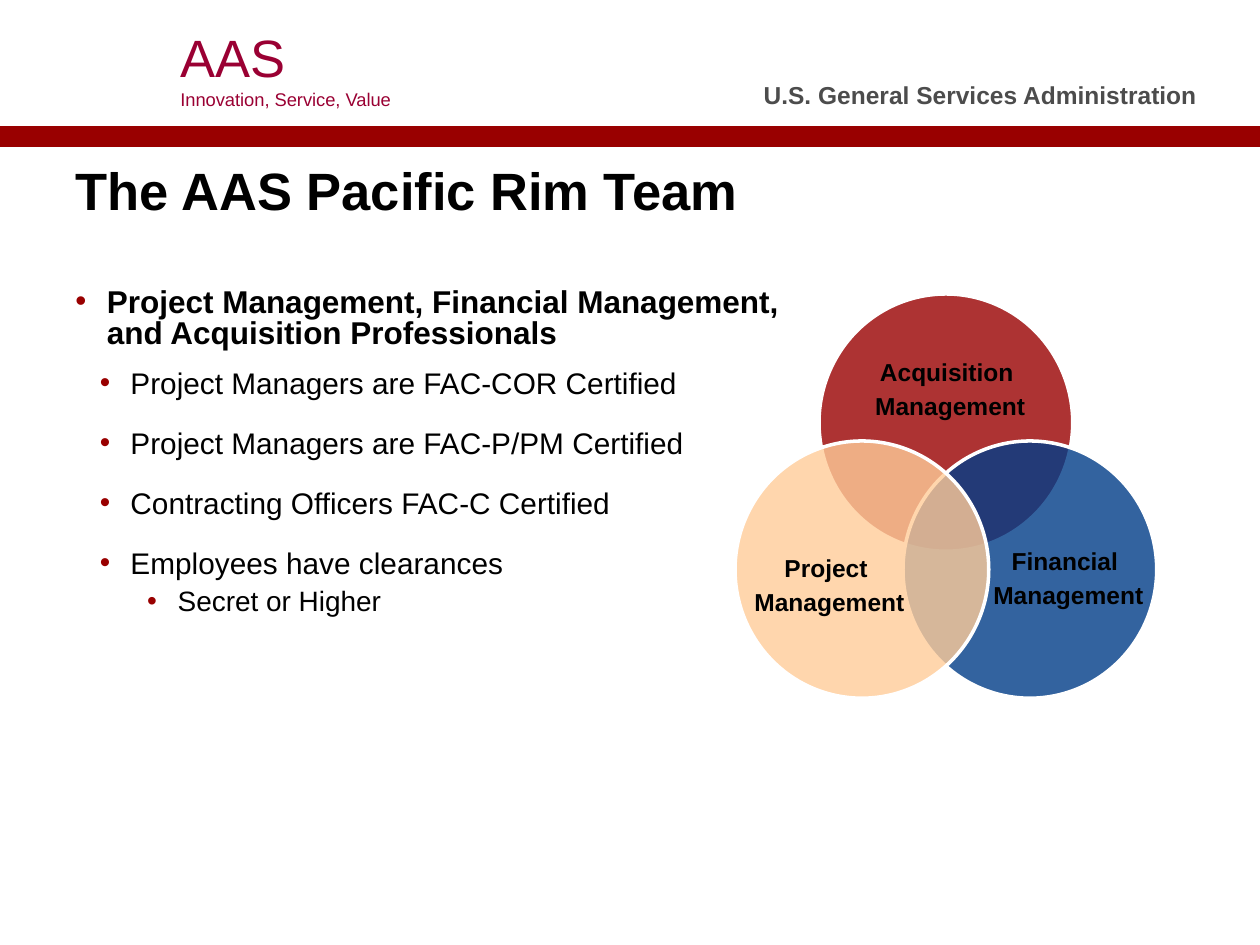
from lxml import etree
from pptx import Presentation
from pptx.dml.color import RGBColor
from pptx.enum import shapes, text
from pptx.oxml import ns
from pptx.util import Pt

COLORS = {"red": "990000", "crimson": "9A0033", "gray": "4C4C4C", "black": "000000",
          "white": "FFFFFF", "blue": "013C88", "peach": "FFCC99"}
FONT = "Arial"
INSETS = (7.2, 3.6, 7.2, 3.6)
SIDES = ("left", "top", "right", "bottom")

TEAM = [
    ("Project Management, Financial Management, and Acquisition Professionals", 0, 18, 18, 0),
    ("Project Managers are FAC-COR Certified", 1, 17, 31.5, 12),
    ("Project Managers are FAC-P/PM Certified", 1, 17, 31.5, 18),
    ("Contracting Officers FAC-C Certified", 1, 17, 31.5, 18),
    ("Employees have clearances", 1, 17, 31.5, 18),
    ("Secret or Higher", 1, 16, 58.5, 6),
]

VENN = [
    ("Acquisition ", "red", (48, 0), (66, 30, 114, 48), "MIDDLE"),
    ("Financial ", "blue", (96, 84), (136.5, 144, 108, 42), "TOP"),
    ("Project ", "peach", (0, 84), (0, 144, 108, 44), "MIDDLE"),
]


def color(name):
    return RGBColor.from_string(COLORS[name])


def place(part, box):
    for side, length in zip(("left", "top", "width", "height"), box):
        setattr(part, side, Pt(length))


def format_frame(frame, insets=INSETS, anchor="TOP"):
    settings = {f"margin_{side}": Pt(inset) for side, inset in zip(SIDES, insets)}
    settings.update(word_wrap=True, auto_size=text.MSO_AUTO_SIZE.NONE,
                    vertical_anchor=text.MSO_ANCHOR[anchor])
    for key, value in settings.items():
        setattr(frame, key, value)


def write(paragraph, words, size, ink="black", bold=False, align="LEFT", before=0):
    paragraph.alignment = text.PP_ALIGN[align]
    paragraph.space_before = Pt(before)
    run = paragraph.add_run()
    run.text = words
    for key, value in {"name": FONT, "size": Pt(size), "bold": bold}.items():
        setattr(run.font, key, value)
    run.font.color.rgb = color(ink)


def next_paragraph(frame, index):
    return frame.add_paragraph() if index else frame.paragraphs[0]


def add_text(parent, box, insets=INSETS, anchor="TOP"):
    frame = parent.add_textbox(*map(Pt, box)).text_frame
    format_frame(frame, insets, anchor)
    return frame


def add_bullet(paragraph, indent, hang):
    properties = paragraph._p.get_or_add_pPr()
    properties.set("marL", str(Pt(indent)))
    properties.set("indent", str(Pt(-hang)))
    bullet_color = etree.SubElement(properties, ns.qn("a:buClr"))
    etree.SubElement(bullet_color, ns.qn("a:srgbClr"), val=COLORS["red"])
    etree.SubElement(properties, ns.qn("a:buFont"), typeface=FONT)
    etree.SubElement(properties, ns.qn("a:buChar"), char="•")


def build_header(slide, left, top, width, height):
    band = slide.shapes.add_shape(shapes.MSO_SHAPE.RECTANGLE, Pt(left), Pt(top + height - 12),
                                  Pt(width), Pt(12))
    band.shadow.inherit = False
    band.fill.solid()
    band.fill.fore_color.rgb = color("red")
    band.line.fill.background()
    agency = add_text(slide.shapes, (left + width - 294, top + 42, 258, 24), (0, 3.6, 0, 3.6))
    write(agency.paragraphs[0], "U.S. General Services Administration", 14, "gray", True, "RIGHT")
    program = add_text(slide.shapes, (left + 96, top + 11, 294, 56))
    for index, (words, size) in enumerate([("AAS", 30), ("Innovation, Service, Value", 10.5)]):
        write(next_paragraph(program, index), words, size, "crimson")


def build_title(slide, box):
    title = slide.shapes.title
    place(title, box)
    format_frame(title.text_frame, anchor="MIDDLE")
    write(title.text_frame.paragraphs[0], "The AAS Pacific Rim Team", 30, bold=True)


def build_team_list(slide, box):
    frame = add_text(slide.shapes, box)
    for index, (words, level, size, indent, before) in enumerate(TEAM):
        paragraph = next_paragraph(frame, index)
        add_bullet(paragraph, indent, 17.5 if level else 18)
        paragraph.level = level
        paragraph.line_spacing = 0.8
        write(paragraph, words, size, bold=level == 0, before=before)


def build_venn(slide, left, top, diameter):
    venn = slide.shapes.add_group_shape().shapes
    for field, fill, (dx, dy), (label_x, label_y, width, height), anchor in VENN:
        circle = venn.add_shape(shapes.MSO_SHAPE.OVAL, Pt(left + dx), Pt(top + dy),
                                Pt(diameter), Pt(diameter + 2))
        circle.shadow.inherit = False
        circle.fill.solid()
        circle.fill.fore_color.rgb = color(fill)
        tint = circle.fill._xPr.find(ns.qn("a:solidFill"))[0]
        etree.SubElement(tint, ns.qn("a:alpha"), val="80000")
        circle.line.color.rgb = color("white")
        circle.line.width = Pt(2)
        label = add_text(venn, (left + label_x, top + label_y, width, height), (0, 0, 0, 0), anchor)
        for index, words in enumerate([field, "Management"]):
            write(next_paragraph(label, index), words, 14, bold=True, align="CENTER",
                  before=2.8 * index)


def main():
    deck = Presentation()
    deck.slide_width, deck.slide_height = Pt(720), Pt(540)
    slide = deck.slides.add_slide(deck.slide_layouts[5])
    build_header(slide, 0, 0, 720, 84)
    build_title(slide, (36, 86.5, 684, 44))
    build_team_list(slide, (36, 162, 426, 331))
    build_venn(slide, 420, 168, 145)
    deck.save("out.pptx")


if __name__ == "__main__":
    main()
